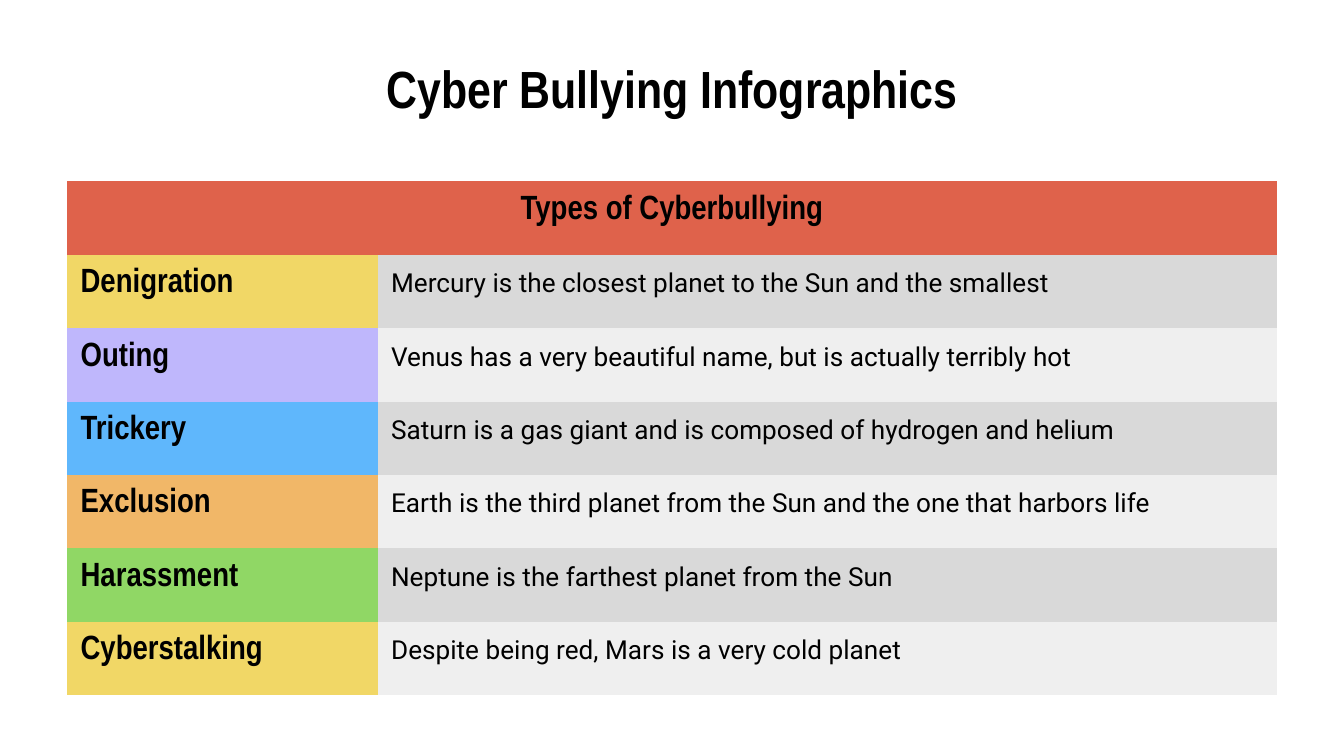
from dataclasses import dataclass

from pptx import Presentation
from pptx.dml.color import RGBColor
from pptx.enum.text import MSO_ANCHOR, PP_ALIGN
from pptx.util import Inches, Pt

CENTER, LEFT = PP_ALIGN.CENTER, PP_ALIGN.LEFT
MIDDLE = MSO_ANCHOR.MIDDLE
PLAIN_TABLE_STYLE = "{2D5ABB26-0587-4C30-8999-92F81FD0307C}"  # no style, no grid


@dataclass(frozen=True)
class Theme:
    heading_font: str = "Arial Narrow"
    body_font: str = "Roboto"
    title_size: int = 28
    heading_size: int = 18
    body_size: int = 14
    text: str = "000000"
    header: str = "DF624B"
    yellow: str = "F1D766"
    lilac: str = "BFB7FC"
    blue: str = "5FB7FC"
    orange: str = "F1B768"
    green: str = "90D765"
    bands: tuple = ("D9D9D9", "EFEFEF")


theme = Theme()

BULLYING_TYPES = [
    ("Denigration", theme.yellow, "Mercury is the closest planet to the Sun and the smallest"),
    ("Outing", theme.lilac, "Venus has a very beautiful name, but is actually terribly hot"),
    ("Trickery", theme.blue, "Saturn is a gas giant and is composed of hydrogen and helium"),
    ("Exclusion", theme.orange, "Earth is the third planet from the Sun and the one that harbors life"),
    ("Harassment", theme.green, "Neptune is the farthest planet from the Sun"),
    ("Cyberstalking", theme.yellow, "Despite being red, Mars is a very cold planet"),
]


def write_text(frame, text, size, heading=True, align=LEFT):
    frame.margin_left = frame.margin_right = INSET
    frame.margin_top = frame.margin_bottom = INSET
    frame.word_wrap = True
    paragraph = frame.paragraphs[0]
    paragraph.alignment = align
    run = paragraph.add_run()
    run.text = text
    run.font.name = theme.heading_font if heading else theme.body_font
    run.font.size = Pt(size)
    run.font.bold = heading
    run.font.color.rgb = RGBColor.from_string(theme.text)


def fill_cell(cell, color, text, size, heading=True, align=LEFT):
    cell.fill.solid()
    cell.fill.fore_color.rgb = RGBColor.from_string(color)
    cell.margin_left = cell.margin_right = INSET
    cell.margin_top = cell.margin_bottom = INSET
    write_text(cell.text_frame, text, size, heading, align)


# Slide and grid
presentation = Presentation()
presentation.slide_width = Inches(10)
presentation.slide_height = Inches(5.625)
slide = presentation.slides.add_slide(presentation.slide_layouts[6])

INSET = Inches(0.1)
margin = int(presentation.slide_width * 0.05)
content_width = presentation.slide_width - 2 * margin
table_top = int(presentation.slide_height * 0.24)
table_height = int(presentation.slide_height * 0.68)
row_count = len(BULLYING_TYPES) + 1
name_width = Inches(2.31)

# Title
title = slide.shapes.add_textbox(
    margin, int(presentation.slide_height * 0.08), content_width, Inches(0.41))
title.text_frame.vertical_anchor = MIDDLE
write_text(title.text_frame, "Cyber Bullying Infographics", theme.title_size, align=CENTER)

# Table
graphic_frame = slide.shapes.add_table(
    row_count, 2, margin, table_top, content_width, table_height)
table = graphic_frame.table
table.first_row = table.horz_banding = False
table._tbl.tblPr[0].text = PLAIN_TABLE_STYLE
table.columns[0].width = name_width
table.columns[1].width = content_width - name_width
for row in table.rows:
    row.height = table_height // row_count

# Header across both columns
table.cell(0, 0).merge(table.cell(0, 1))
fill_cell(table.cell(0, 0), theme.header, "Types of Cyberbullying",
          theme.heading_size, align=CENTER)

# One row per type, with alternating description bands
for index, (name, color, description) in enumerate(BULLYING_TYPES):
    fill_cell(table.cell(index + 1, 0), color, name, theme.heading_size)
    fill_cell(table.cell(index + 1, 1), theme.bands[index % 2], description,
              theme.body_size, heading=False)

presentation.save("out.pptx")
